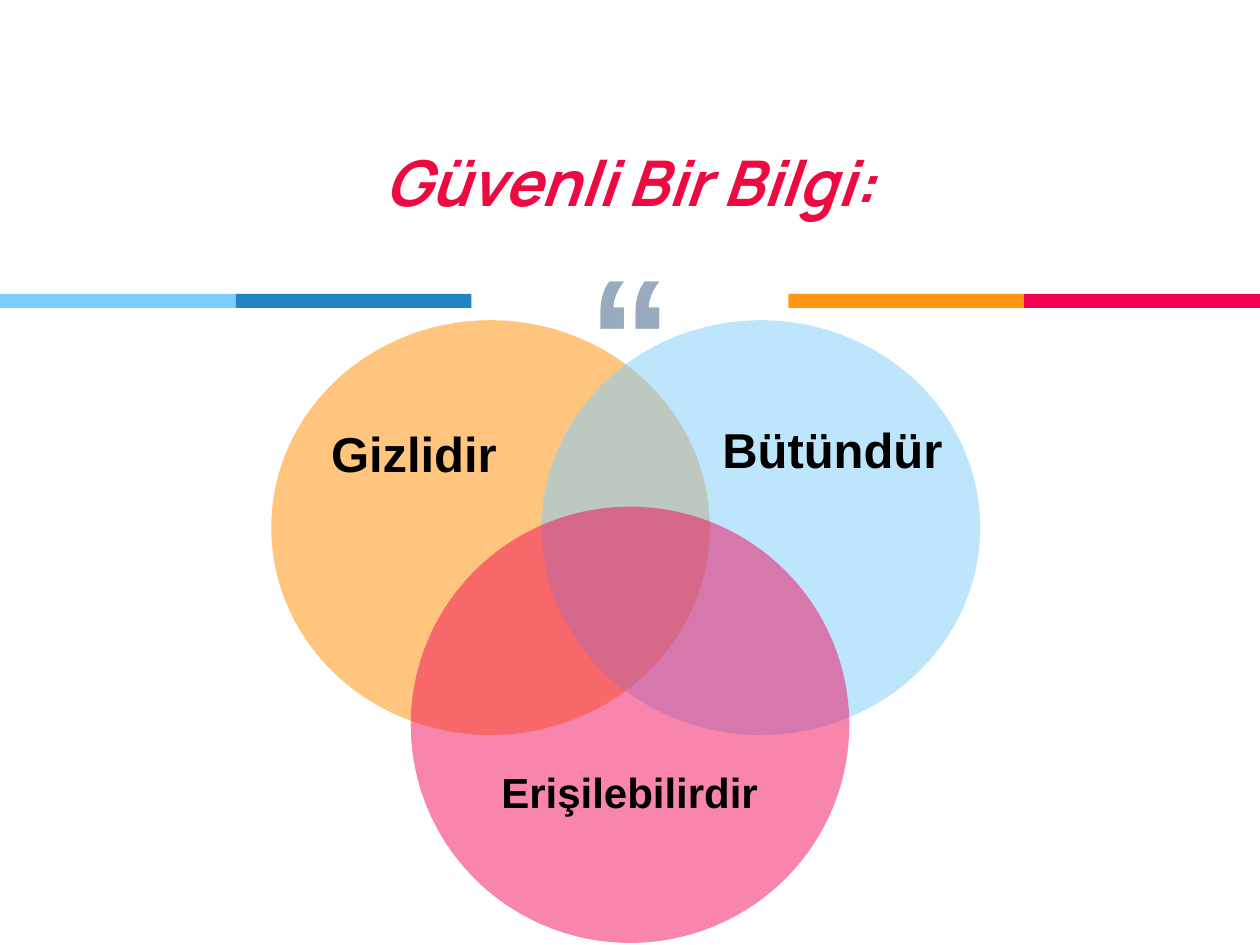
from lxml.etree import SubElement
from pptx import Presentation
from pptx.dml.color import RGBColor as RGB
from pptx.enum.shapes import MSO_SHAPE as Kind
from pptx.enum.text import MSO_ANCHOR as Anchor, PP_ALIGN as Align
from pptx.oxml.ns import qn
from pptx.util import Pt

hues = {"sky": "7ECEFD", "blue": "2185C5", "orange": "FF9715", "pink": "F20253",
        "red": "EC0A40", "grey": "97ABBC", "black": "000000"}

deck = Presentation()
deck.slide_width, deck.slide_height = Pt(720), Pt(540)
slide = deck.slides.add_slide(deck.slide_layouts[5])
shapes = slide.shapes


def write(box, text, size, hue, font="Arial", inset=7.2):
    frame = box.text_frame
    frame.word_wrap = True
    frame.margin_left = frame.margin_right = Pt(7.2)
    frame.margin_top = frame.margin_bottom = Pt(inset)
    line = frame.paragraphs[0]
    line.alignment = Align.CENTER
    run = line.add_run()
    run.text = text
    run.font.name, run.font.size, run.font.bold = font, Pt(size), True
    run.font.color.rgb = RGB.from_string(hues[hue])
    return run


def draw(kind, left, top, width, height, hue):
    shape = shapes.add_shape(kind, Pt(left), Pt(top), Pt(width), Pt(height))
    shape.shadow.inherit = False
    shape.fill.solid()
    shape.fill.fore_color.rgb = RGB.from_string(hues[hue])
    shape.line.fill.background()
    return shape


quote = shapes.add_textbox(Pt(283), Pt(124), Pt(154), Pt(68))
write(quote, "“", 96, "grey")
quote.text_frame.paragraphs[0].space_before = Pt(8)

wide = 134.7
bars = [(0, "sky"), (wide, "blue"), (720 - 2 * wide, "orange"), (720 - wide, "pink")]
for left, hue in bars:
    draw(Kind.RECTANGLE, left, 168, wide, 8, hue)

title = shapes.title
title.left, title.top, title.width, title.height = Pt(0), Pt(42.5), Pt(720), Pt(90)
title.text_frame.vertical_anchor = Anchor.BOTTOM
write(title, "Güvenli Bir Bilgi:", 36, "red", "Manrope").font.italic = True

rings = [
    (155, 183, 237, "orange", 55, "Gizlidir", 28, (157.7, 238.5, 157.7, 41)),
    (309.5, 183, 237, "sky", 51, "Bütündür", 28, (404, 236, 143.3, 41)),
    (234.7, 289.5, 249.3, "pink", 48, "Erişilebilirdir", 24, (272, 434.3, 175.7, 36)),
]
for left, top, height, hue, alpha, text, size, place in rings:
    ring = draw(Kind.OVAL, left, top, 250.6, height, hue)
    tint = ring.fill._xPr.find(qn("a:solidFill"))[0]
    SubElement(tint, qn("a:alpha"), val=str(alpha * 1000))
    label = shapes.add_textbox(*[Pt(side) for side in place])
    write(label, text, size, "black", inset=3.6)

deck.save("out.pptx")
